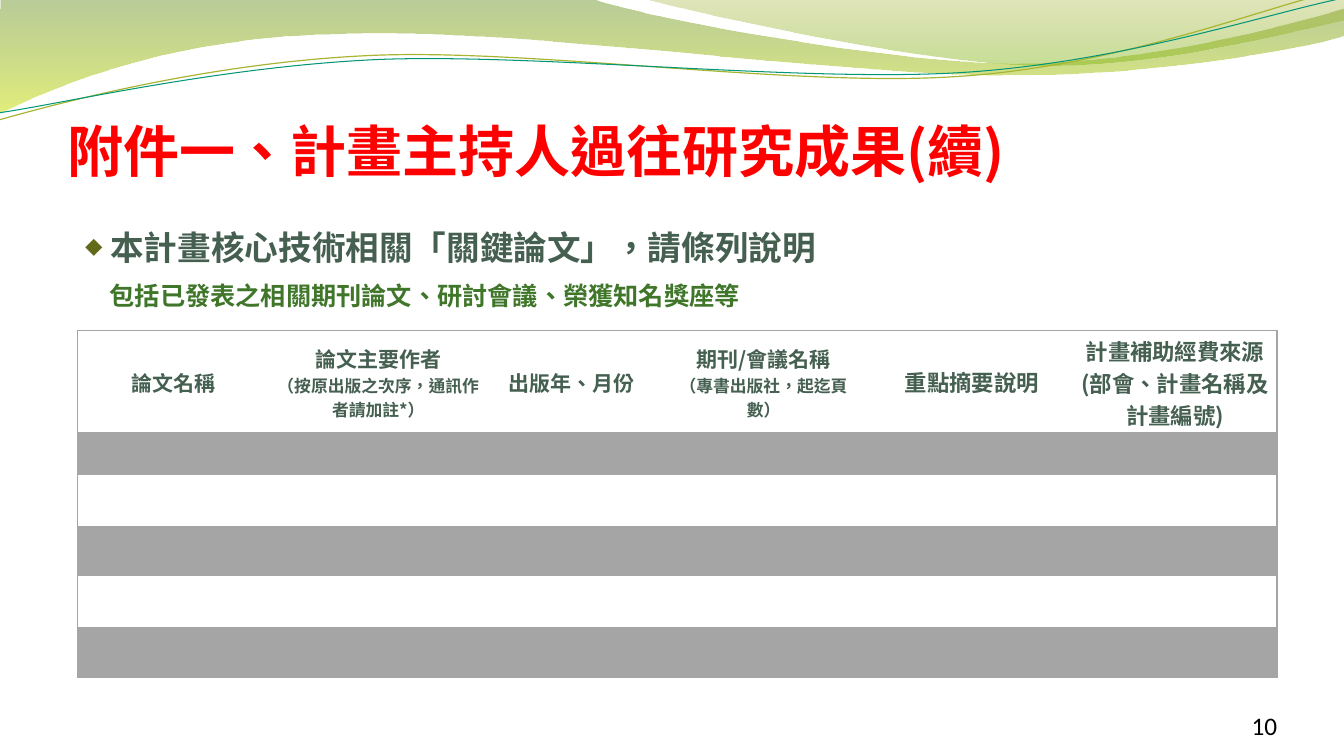
from math import cos, radians, sin

from lxml.etree import SubElement
from pptx import Presentation
from pptx.dml.color import RGBColor
from pptx.enum.text import MSO_ANCHOR, PP_ALIGN
from pptx.oxml import parse_xml
from pptx.oxml.ns import nsdecls, qn
from pptx.util import Pt

COLORS = {
    "title": "FF0000", "heading": "455F51", "note": "3F762A", "bullet": "626A19",
    "gray": "A5A5A5", "white": "FFFFFF", "black": "000000",
    "olive line": "A8B532", "teal line": "029676",
}
CJK = "Noto Sans CJK TC"
UNITS_PER_POINT = 100
TILT = 357.3


def style_paragraph(para, size, color, name=CJK, bold=True):
    font = para.font
    font.size, font.bold, font.name = Pt(size), bold, name
    font.color.rgb = RGBColor.from_string(COLORS[color])
    font._element.set("lang", "zh-TW")
    SubElement(font._element, qn("a:ea"), typeface=name)


def add_curve(shapes, points, straight, closed):
    """Draw cubic segments through points; the indexes in straight end plain lines."""
    scaled = [(round(x * UNITS_PER_POINT), round(y * UNITS_PER_POINT)) for x, y in points]
    builder = shapes.build_freeform(*scaled[0], scale=Pt(1) / UNITS_PER_POINT)
    builder.add_line_segments(scaled[1:], close=closed)
    shape = builder.convert_to_shape()
    shape.shadow.inherit = False
    lines = list(shape._element.iter(qn("a:lnTo")))
    curved = [line for index, line in enumerate(lines, 1) if index not in straight]
    for start in range(0, len(curved), 3):
        first, *others = curved[start:start + 3]
        first.tag = qn("a:cubicBezTo")
        for line in others:
            first.append(line[0])
            line.getparent().remove(line)
    return shape


deck = Presentation()
deck.slide_width, deck.slide_height = Pt(960), Pt(540)
page = deck.slides.add_slide(deck.slide_layouts[6])

# Header waves: outline, ends of straight lines, gradient stops (colour, opacity in percent)
waves = [
    ([(0, 0), (422.6, -0.7),
      (456.5, 12.2), (636.5, 45.4), (727.9, 45.4),
      (818.6, 45.4), (919.4, 18.7), (959.8, 6.5),
      (960.5, 25.9),
      (943.9, 31.7), (834.5, 54.7), (715.7, 54),
      (596.9, 54), (366.5, 20.2), (247, 24.5),
      (123.8, 25.9), (43.9, 59.8), (-1.4, 81.4)],
     (1, 8), [("668F1B", 45), ("CAE00E", 55)]),
    ([(459.4, -0.7),
      (488.9, 7.9), (654.5, 44.6), (738, 46.8),
      (820.8, 49.7), (923, 23), (959.8, 15.1),
      (959.8, 0)],
     (7,), [("99A719", 30), ("80B814", 45)]),
]
for outline, straight, stops in waves:
    wave = add_curve(page.shapes, outline, straight, True)
    wave.line.fill.background()
    wave.fill.gradient()
    wave.fill.gradient_angle = 270
    for stop, (color, opacity) in zip(wave.fill.gradient_stops, stops):
        stop.color.rgb = RGBColor.from_string(color)
    for node, (color, opacity) in zip(wave._element.spPr.iter(qn("a:srgbClr")), stops):
        SubElement(node, qn("a:alpha"), val=str(opacity * 1000))

# Thin strands: visible points, centre of the tilted frame, colour, width
strands = [
    ([(-0.7, 85.7),
      (45.4, 72.7), (151.2, 44.6), (265.7, 39.6),
      (379.4, 34.6), (568.1, 62.6), (683.3, 54.7),
      (799.2, 47.5), (900.7, 5.8), (957.6, -7.2)], (478.8, 41.4), "olive line", 0.85),
    ([(-0.7, 80.6),
      (44.6, 74.2), (157, 47.5), (271.4, 42.5),
      (386.6, 38.2), (573.1, 59), (687.6, 51.8),
      (802.1, 44.6), (903.6, 10.1), (959.8, -1.4)], (480.2, 42.5), "teal line", 0.75),
]
turn = radians(-TILT)
for outline, (center_x, center_y), color, width in strands:
    level = [(center_x + (x - center_x) * cos(turn) - (y - center_y) * sin(turn),
              center_y + (x - center_x) * sin(turn) + (y - center_y) * cos(turn))
             for x, y in outline]
    strand = add_curve(page.shapes, level, (), False)
    strand.rotation = TILT
    strand.fill.background()
    strand.line.color.rgb = RGBColor.from_string(COLORS[color])
    strand.line.width = Pt(width)

# Text, box, insets, anchor, alignment, line spacing, font
BODY_INSETS = (7.2, 3.6, 7.2, 3.6)
texts = [
    ("附件一、計畫主持人過往研究成果(續)", (48, 41, 864, 90), (0, 3.6, 0, 0),
     MSO_ANCHOR.BOTTOM, PP_ALIGN.LEFT, 1, (40, "title")),
    ("本計畫核心技術相關「關鍵論文」，請條列說明", (48, 144, 880.5, 54), BODY_INSETS,
     MSO_ANCHOR.TOP, PP_ALIGN.LEFT, 1.5, (24, "heading")),
    ("10", (832.3, 500.4, 80, 28.8), (0, 0, 0, 0),
     MSO_ANCHOR.BOTTOM, PP_ALIGN.RIGHT, 1, (18, "black", "Calibri", False)),
    ("包括已發表之相關期刊論文、研討會議、榮獲知名獎座等", (71.3, 185.8, 833.8, 40.3), BODY_INSETS,
     MSO_ANCHOR.TOP, PP_ALIGN.LEFT, 1.5, (18, "note")),
]
for text, place, insets, anchor, alignment, spacing, font in texts:
    frame = page.shapes.add_textbox(*map(Pt, place)).text_frame
    frame.word_wrap = True
    frame.vertical_anchor = anchor
    (frame.margin_left, frame.margin_top,
     frame.margin_right, frame.margin_bottom) = map(Pt, insets)
    para = frame.paragraphs[0]
    para.text, para.alignment, para.line_spacing = text, alignment, spacing
    if font == (24, "heading"):
        properties = para._p.get_or_add_pPr()
        properties.set("marL", str(Pt(23.8)))
        properties.set("indent", str(Pt(-18)))
        bullet_color = SubElement(properties, qn("a:buClr"))
        SubElement(bullet_color, qn("a:srgbClr"), val=COLORS["bullet"])
        SubElement(properties, qn("a:buSzPct"), val="52000")
        SubElement(properties, qn("a:buFont"), typeface=CJK)
        SubElement(properties, qn("a:buChar"), char="◆")
    style_paragraph(para, *font)

# Publications table: each heading is a list of (text, size)
headings = [
    [("論文名稱", 15)],
    [("論文主要作者", 15), ("（按原出版之次序，通訊作者請加註*）", 12)],
    [("出版年、月份", 15)],
    [("期刊/會議名稱", 15), ("（專書出版社，起迄頁數）", 12)],
    [("重點摘要說明", 16)],
    [("計畫補助經費來源", 16), ("(部會、計畫名稱及計畫編號)", 16)],
]
column_widths = [137, 155.6, 121.1, 152.7, 144.8, 145.6]
row_heights = [73.6, 29.5] + [36.2] * 4
last_row, last_column = len(row_heights) - 1, len(column_widths) - 1
table = page.shapes.add_table(
    len(row_heights), len(column_widths), Pt(55.4), Pt(236.2),
    Pt(sum(column_widths)), Pt(sum(row_heights))).table
table.first_row = table.horz_banding = False
table._tbl.tblPr[0].text = "{2D5ABB26-0587-4C30-8999-92F81FD0307C}"
for column, width in zip(table.columns, column_widths):
    column.width = Pt(width)

for r, height in enumerate(row_heights):
    table.rows[r].height = Pt(height)
    for c in range(len(column_widths)):
        cell = table.cell(r, c)
        cell.margin_left = cell.margin_right = Pt(5)
        cell.margin_top = cell.margin_bottom = Pt(2.5)
        cell.vertical_anchor = MSO_ANCHOR.MIDDLE
        cell.fill.solid()
        cell.fill.fore_color.rgb = RGBColor.from_string(COLORS["gray" if r % 2 else "white"])
        borders = [("L", 1, c == 0), ("R", 1, c == last_column), ("T", 1, r == 0),
                   ("B", 2 if r == 0 else 1, r in (0, last_row))]
        drawn = [(side, width) for side, width, shown in borders if shown]
        for position, (side, width) in enumerate(drawn):
            cell._tc.get_or_add_tcPr().insert(position, parse_xml(
                f'<a:ln{side} {nsdecls("a")} w="{Pt(width)}"><a:solidFill>'
                f'<a:srgbClr val="{COLORS["gray"]}"/></a:solidFill></a:ln{side}>'))
        if r == 0:
            frame = cell.text_frame
            frame.text = "\n".join(text for text, size in headings[c])
            for para, (text, size) in zip(frame.paragraphs, headings[c]):
                para.alignment = PP_ALIGN.CENTER
                style_paragraph(para, size, "heading")

deck.save("out.pptx")
